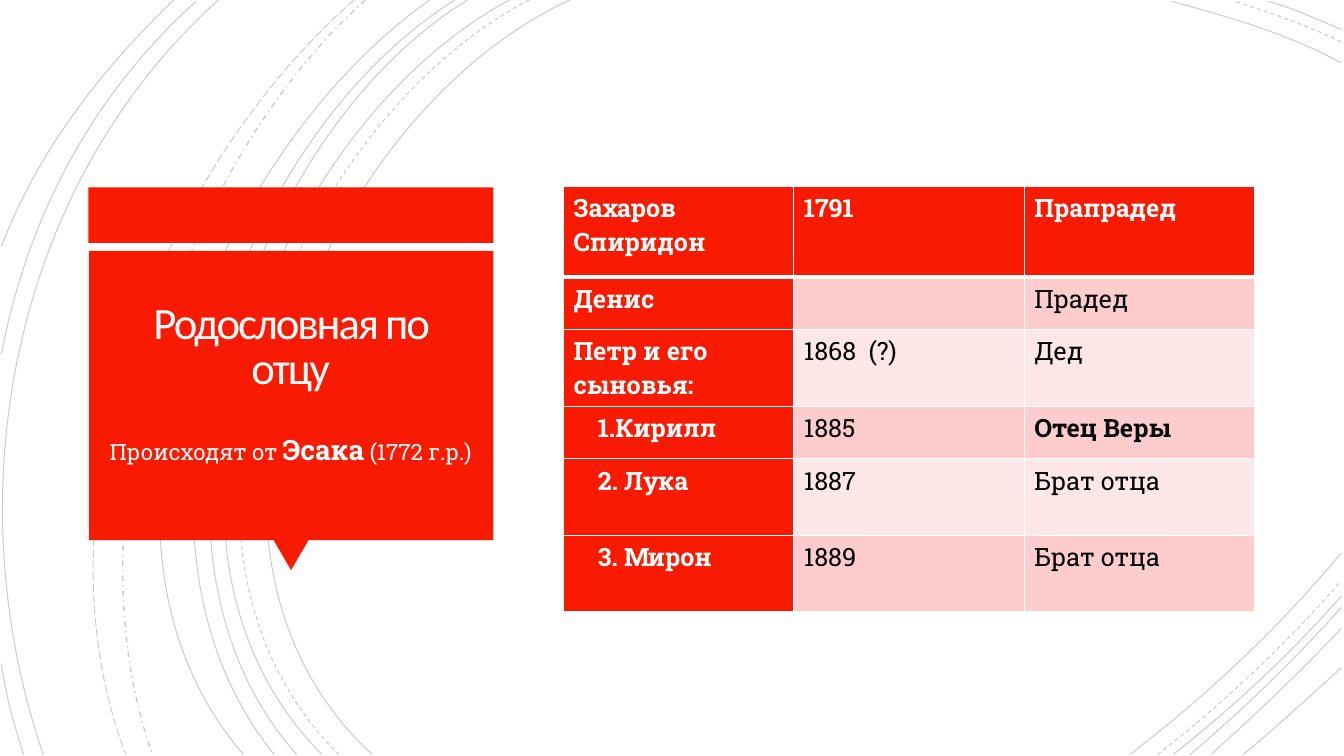
from lxml.etree import SubElement
from pptx import Presentation
from pptx.dml.color import RGBColor as RGB
from pptx.enum.dml import MSO_LINE as DASH
from pptx.enum.shapes import MSO_SHAPE as SHAPE
from pptx.enum.text import MSO_ANCHOR as ANCHOR, PP_ALIGN as ALIGN
from pptx.oxml.ns import qn
from pptx.util import Pt

TITLE = "Родословная по отцу"
ORIGIN = [("Происходят от ", "small", False), ("Эсака", "name", True),
          (" (1772 г.р.)", "small", False)]
FAMILY = [
    ("Захаров Спиридон", "1791", "Прапрадед"),
    ("Денис", "", "Прадед"),
    ("Петр и его сыновья:", "1868  (?)", "Дед"),
    ("1.Кирилл", "1885", "Отец Веры"),
    ("2. Лука", "1887", "Брат отца"),
    ("3. Мирон", "1889", "Брат отца"),
]
FIRST_SON = 3
BOLD_TEXTS = {"Отец Веры"}
ROW_HEIGHTS = [64.8, 37.4, 54.8, 37.4, 54.8, 54.8]
COL_WIDTH = 164.6
TABLE_POS = (402.5, 133.2)

THEME = {
    "red": RGB.from_string("F81B02"),
    "bands": [RGB.from_string("FEE8E7"), RGB.from_string("FCCDCC")],
    "white": RGB.from_string("FFFFFF"),
    "panel_text": RGB.from_string("FFFEFF"),
    "black": RGB.from_string("000000"),
    "head_font": "Calibri", "body_font": "Roboto Slab",
    "title": Pt(32), "name": Pt(20), "cell": Pt(18), "small": Pt(16),
    "arc_alpha": "20000", "title_spacing": "-150",
}

ARCS = {
    (DASH.SOLID, 0.75): [
        [(407, 0), (227, 83), (103, 389), (266, 539)],
        [(364, 0), (194, 91), (79, 387), (230, 539)],
        [(334, 0), (176, 96), (79, 390), (212, 539)],
        [(325, 0), (166, 99), (70, 384), (196, 539)],
        [(307, 0), (156, 106), (38, 381), (174, 539)],
        [(156, 0), (8, 133), (-33, 353), (31, 539)],
        [(140, 1), (66, 68), (20, 154), (1, 253)],
        [(124, 0), (72, 50), (27, 108), (1, 176)],
        [(1, 474), (4, 496), (10, 518), (17, 539)],
        [(958, 45), (920, 24), (877, 12), (837, 1)],
        [(958, 21), (941, 14), (924, 6), (906, 1)],
        [(807, 539), (862, 497), (914, 448), (958, 395)],
        [(838, 539), (881, 505), (922, 467), (958, 426)],
        [(850, 539), (888, 507), (924, 472), (958, 434)],
        [(865, 539), (897, 510), (929, 480), (958, 449)],
        [(888, 539), (912, 519), (935, 498), (958, 477)],
    ],
    (DASH.DASH, 0.75): [
        [(378, 0), (205, 90), (89, 387), (242, 539)],
        [(958, 30), (934, 18), (907, 9), (882, 1)],
        [(827, 539), (873, 503), (918, 461), (958, 415)],
    ],
    (DASH.DASH_DOT, 1): [[(261, 0), (127, 120), (47, 366), (109, 539)]],
    (DASH.LONG_DASH, 0.75): [[(253, 0), (113, 122), (21, 359), (90, 539)]],
}

PANEL = [
    (SHAPE.RECTANGLE, (63.2, 133.9, 289.3, 39.6), 0),
    (SHAPE.ISOSCELES_TRIANGLE, (195.3, 385.6, 25.2, 21.6), 180),
    (SHAPE.RECTANGLE, (63.6, 179.3, 288.9, 206.6), 0),
]
TITLE_BOX = (69.8, 185, 275.8, 96.5)
ORIGIN_BOX = (69.8, 300.6, 275.8, 77.8)


def apply(obj, **fmt):
    for key, value in fmt.items():
        setattr(obj, key, value)


def add_arc(shapes, points, dash, width):
    start, *rest = [tuple(map(Pt, point)) for point in points]
    builder = shapes.build_freeform(*start)
    builder.add_line_segments(rest, close=False)
    sp = builder.convert_to_shape()
    outline = sp._element.find(".//" + qn("a:path"))
    curve = SubElement(outline, qn("a:cubicBezTo"))
    for segment in outline.findall(qn("a:lnTo")):
        curve.append(segment[0])
        outline.remove(segment)
    sp.shadow.inherit = False
    sp.fill.background()
    sp.line.color.rgb = THEME["black"]
    apply(sp.line, width=Pt(width), dash_style=dash)
    color = sp._element.spPr.find(".//" + qn("a:srgbClr"))
    SubElement(color, qn("a:alpha"), val=THEME["arc_alpha"])


def add_panel_part(shapes, kind, box, rotation):
    sp = shapes.add_shape(kind, *map(Pt, box))
    sp.shadow.inherit = False
    sp.fill.solid()
    sp.fill.fore_color.rgb = THEME["red"]
    sp.line.fill.background()
    sp.rotation = rotation


def add_run(p, text, size, font, color, bold=False):
    r = p.add_run()
    r.text = text
    apply(r.font, size=THEME[size], name=THEME[font], bold=bold)
    r.font.color.rgb = THEME[color]
    return r


def add_text(shapes, box, frame, para):
    tf = shapes.add_textbox(*map(Pt, box)).text_frame
    apply(tf, word_wrap=True, **frame)
    p = tf.paragraphs[0]
    apply(p, alignment=ALIGN.CENTER, **para)
    return p


def add_borders(cell, widths):
    tc_pr = cell._tc.get_or_add_tcPr()
    for i, (side, width) in enumerate(widths.items()):
        ln = SubElement(tc_pr, qn("a:ln" + side), w=str(Pt(width)))
        fill = SubElement(ln, qn("a:solidFill"))
        SubElement(fill, qn("a:srgbClr"), val=str(THEME["white"]))
        tc_pr.insert(i, ln)


def add_family_table(shapes):
    cols = len(FAMILY[0])
    table = shapes.add_table(len(FAMILY), cols, *map(Pt, TABLE_POS),
                             Pt(COL_WIDTH * cols), Pt(sum(ROW_HEIGHTS))).table
    for col in table.columns:
        col.width = Pt(COL_WIDTH)
    for i, (row, height) in enumerate(zip(FAMILY, ROW_HEIGHTS)):
        table.rows[i].height = Pt(height)
        for j, text in enumerate(row):
            cell = table.cell(i, j)
            header = i == 0 or j == 0
            cell.fill.solid()
            cell.fill.fore_color.rgb = THEME["red"] if header else THEME["bands"][i % 2]
            add_borders(cell, {"L": 1, "R": 1, "T": 3 if i == 1 else 1,
                               "B": 3 if i == 0 else 1})
            if j == 0 and i >= FIRST_SON:
                cell.margin_left = Pt(24.5)
            if text:
                add_run(cell.text_frame.paragraphs[0], text, "cell", "body_font",
                        "white" if header else "black", header or text in BOLD_TEXTS)


def main():
    prs = Presentation()
    apply(prs, slide_width=Pt(960), slide_height=Pt(540))
    shapes = prs.slides.add_slide(prs.slide_layouts[6]).shapes
    for (dash, width), arcs in ARCS.items():
        for points in arcs:
            add_arc(shapes, points, dash, width)
    for part in PANEL:
        add_panel_part(shapes, *part)
    p = add_text(shapes, TITLE_BOX,
                 dict(vertical_anchor=ANCHOR.BOTTOM, margin_left=Pt(18),
                      margin_right=Pt(18), margin_top=Pt(18), margin_bottom=0),
                 dict(line_spacing=0.85))
    r = add_run(p, TITLE, "title", "head_font", "panel_text")
    r.font._element.set("spc", THEME["title_spacing"])
    add_family_table(shapes)
    p = add_text(shapes, ORIGIN_BOX, dict(vertical_anchor=ANCHOR.TOP),
                 dict(line_spacing=1.2, space_before=Pt(10)))
    for text, size, bold in ORIGIN:
        add_run(p, text, size, "body_font", "panel_text", bold)
    prs.save("out.pptx")


if __name__ == "__main__":
    main()
